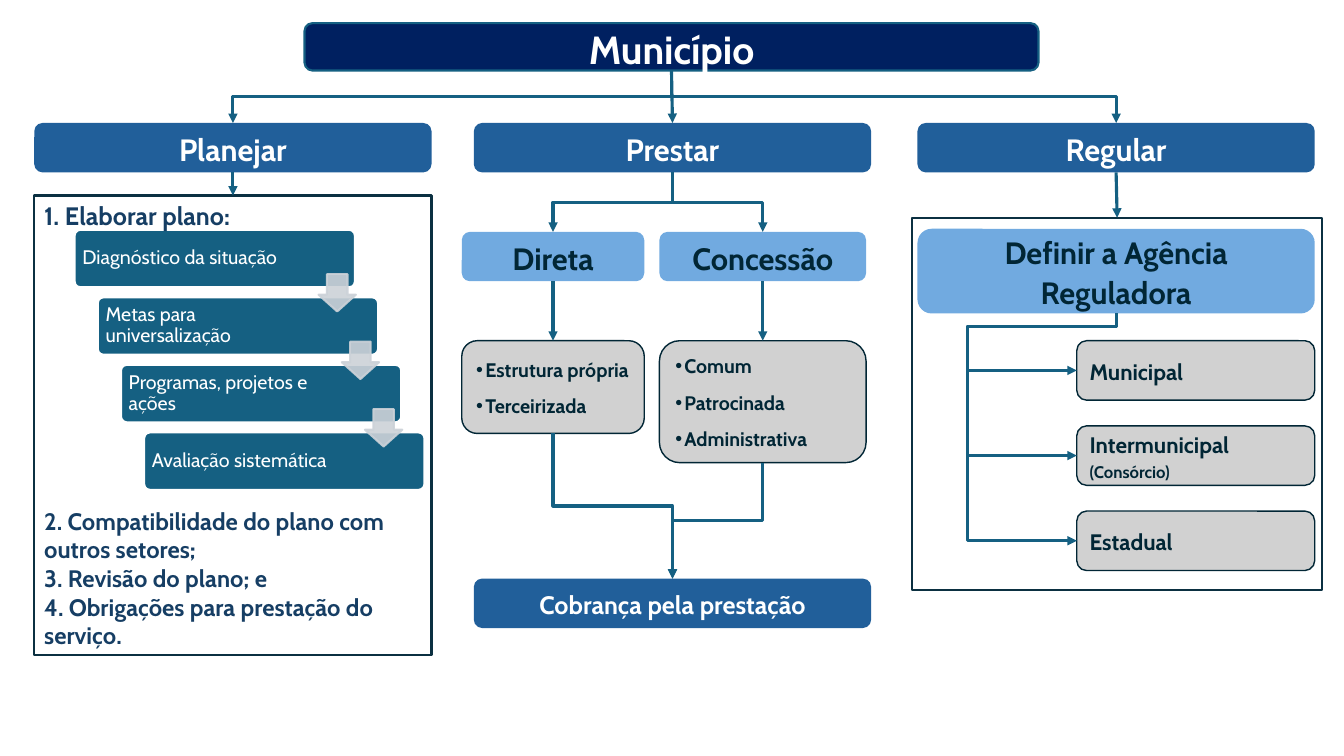
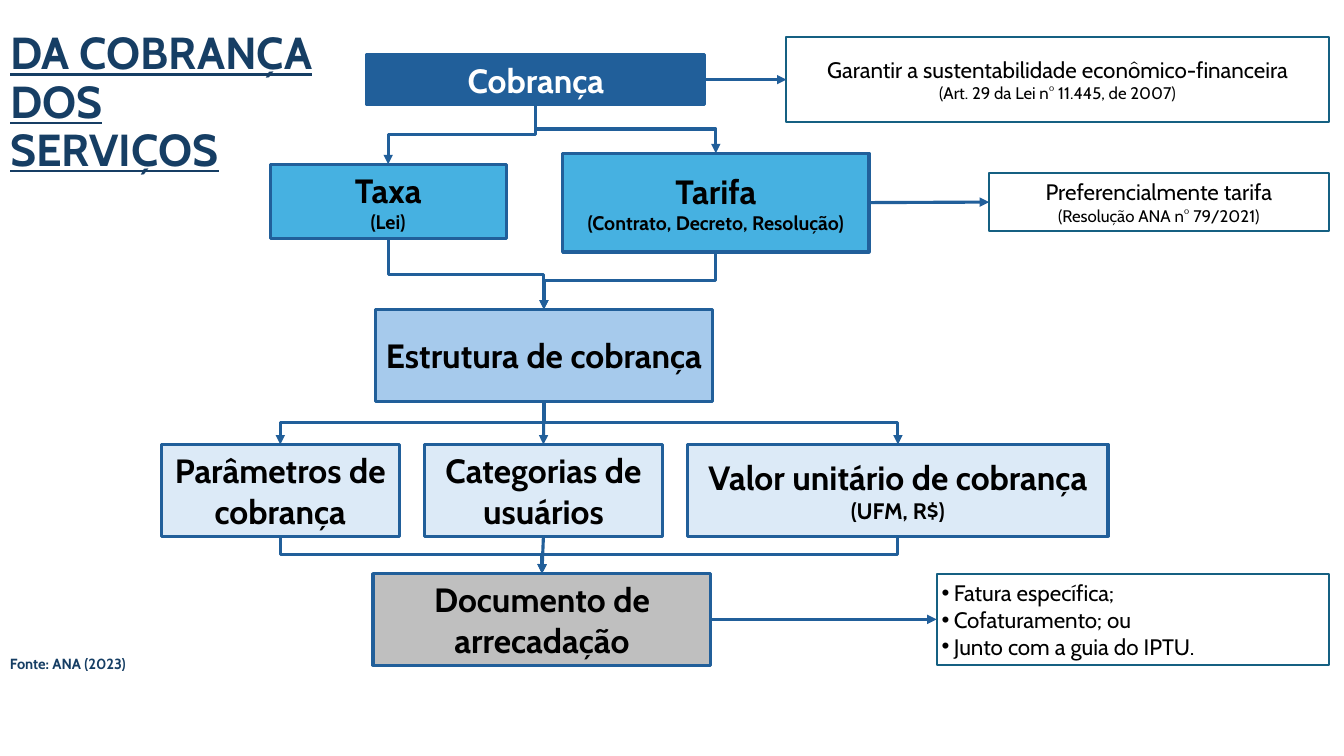
from lxml.etree import SubElement
from pptx import Presentation
from pptx.dml.color import RGBColor
from pptx.enum.dml import MSO_LINE
from pptx.enum.shapes import MSO_CONNECTOR as CONNECTOR, MSO_SHAPE as SHAPE
from pptx.enum.text import MSO_ANCHOR as ANCHOR, MSO_AUTO_SIZE, PP_ALIGN as ALIGN
from pptx.oxml.ns import qn
from pptx.util import Inches, Pt

FONT = "Cabin"
COLORS = {
    "navy": "002060", "blue": "215F9A", "sky": "71AAE0", "teal": "156082",
    "cyan": "46B1E1", "light": "A6CAEC", "pale": "DCEAF7", "gray": "D1D1D1",
    "silver": "BFBFBF", "arrow": "CCD2D8", "ink": "012635", "dash": "0B3041",
    "heading": "163E64", "white": "FFFFFF", "black": "000000",
}
COLORS = {name: RGBColor.from_string(value) for name, value in COLORS.items()}
TOP, LEFT, BOTTOM, RIGHT = range(4)


def add_box(slide, kind, at, lines=(), fill=None, line=None, width=1.5, color="white",
            bold=True, align=ALIGN.CENTER, anchor=ANCHOR.MIDDLE, margins=(0.1, 0.05, 0.1, 0.05),
            spacing=1.0, after=0, indent=None):
    """Add a box; lines holds (text, size) pairs, indent is (left margin, first line)."""
    place = [Inches(value) for value in at]
    if kind is None:
        shape = slide.shapes.add_textbox(*place)
    else:
        shape = slide.shapes.add_shape(kind, *place)
        shape.shadow.inherit = False
    if fill:
        shape.fill.solid()
        shape.fill.fore_color.rgb = COLORS[fill]
    else:
        shape.fill.background()
    if line:
        shape.line.color.rgb = COLORS[line]
        shape.line.width = Pt(width)
    else:
        shape.line.fill.background()
    frame = shape.text_frame
    frame.word_wrap = True
    frame.auto_size = MSO_AUTO_SIZE.NONE
    frame.vertical_anchor = anchor
    (frame.margin_left, frame.margin_top,
     frame.margin_right, frame.margin_bottom) = [Inches(value) for value in margins]
    for index, (text, size) in enumerate(lines):
        paragraph = frame.paragraphs[0] if index == 0 else frame.add_paragraph()
        paragraph.alignment = align
        paragraph.line_spacing = spacing
        paragraph.space_after = Pt(after)
        if indent:
            properties = paragraph._p.get_or_add_pPr()
            properties.set("marL", str(Inches(indent[0])))
            properties.set("indent", str(Inches(indent[1])))
            SubElement(properties, qn("a:buFont"), typeface="Arial")
            SubElement(properties, qn("a:buChar"), char="•")
        run = paragraph.add_run()
        run.text = text
        run.font.name, run.font.size, run.font.bold = FONT, Pt(size), bold
        run.font.color.rgb = COLORS[color]
    return shape


def connect(slide, start, end, color, sides=(BOTTOM, TOP), elbow=False, detour=None):
    """Join two boxes with an arrow; detour is the (down, left) way round of a side entry."""
    kind = CONNECTOR.ELBOW if elbow else CONNECTOR.STRAIGHT
    connector = slide.shapes.add_connector(kind, 0, 0, 0, 0)
    connector.begin_connect(start, sides[0])
    connector.end_connect(end, sides[1])
    connector.line.color.rgb = COLORS[color]
    connector.line.width = Pt(2.25)
    SubElement(connector.line._get_or_add_ln(), qn("a:tailEnd"), type="triangle")
    properties = connector._element.spPr
    SubElement(properties, qn("a:effectLst"))
    if elbow:
        # A bend that leaves downwards is a sideways bend turned by 90 degrees
        dx = connector.end_x - connector.begin_x
        dy = connector.end_y - connector.begin_y
        middle_x = connector.begin_x + dx // 2
        middle_y = connector.begin_y + dy // 2
        connector.width, connector.height = dy, abs(dx)
        connector.left, connector.top = middle_x - dy // 2, middle_y - abs(dx) // 2
        transform = properties.xfrm
        transform.flipH, transform.flipV = dx > 0, False
        transform.set("rot", "16200000" if dx > 0 else "5400000")
        if detour:
            geometry = properties.find(qn("a:prstGeom"))
            geometry.set("prst", "bentConnector4")
            guides = geometry.find(qn("a:avLst"))
            if guides is None:
                guides = SubElement(geometry, qn("a:avLst"))
            for number, (reach, extent) in enumerate(zip(detour, (dy, abs(dx))), 1):
                ratio = round(100000 * Inches(reach) / extent)
                SubElement(guides, qn("a:gd"), name=f"adj{number}", fmla=f"val {ratio}")
    return connector


presentation = Presentation()
presentation.slide_width, presentation.slide_height = Inches(13.33), Inches(7.5)

# Slide 1: duties of the municipality
slide = presentation.slides.add_slide(presentation.slide_layouts[6])
rounded = SHAPE.ROUNDED_RECTANGLE
header = dict(fill="blue", spacing=1.07)
option = dict(fill="sky", color="ink", spacing=1.07)
detail = dict(fill="gray", line="ink", width=1, color="ink", align=ALIGN.LEFT, spacing=1.07)
dashed = dict(line="dash", color="heading", align=ALIGN.LEFT, anchor=ANCHOR.TOP)

city = add_box(slide, rounded, (3.02, 0.23, 7.28, 0.47), [("Município", 28)],
               fill="navy", line="teal", spacing=1.07)
plan, provide, regulate = [
    add_box(slide, rounded, (left, 1.22, 3.94, 0.49), [(text, 22)], **header)
    for left, text in ((0.34, "Planejar"), (4.7, "Prestar"), (9.1, "Regular"))]
for duty in (regulate, plan):
    connect(slide, city, duty, "teal", elbow=True)
connect(slide, city, provide, "teal")

# Planning: descending steps and the arrows between them
steps = ["Diagnóstico da situação", "Metas para universalização",
         "Programas, projetos e ações", "Avaliação sistemática"]
for index, text in enumerate(steps):
    step = add_box(slide, rounded, (0.74 + 0.23 * index, 2.28 + 0.67 * index, 2.78, 0.57),
                   [(text, 14)], fill="teal", line="white", bold=False, align=ALIGN.LEFT,
                   spacing=0.9, margins=(0.06, 0.06, 0.66, 0.06))
    step.adjustments[0] = 0.1
for index in range(len(steps) - 1):
    arrow = add_box(slide, SHAPE.DOWN_ARROW,
                    (3.16 + 0.23 * index, 2.72 + 0.67 * index, 0.37, 0.37),
                    fill="arrow", line="arrow")
    arrow.adjustments[0], arrow.adjustments[1] = 0.55, 0.45
    for color_element in arrow._element.spPr.iter(qn("a:srgbClr")):
        SubElement(color_element, qn("a:alpha"), val="90000")

plan_panel = add_box(slide, SHAPE.RECTANGLE, (0.34, 1.94, 3.94, 4.56), [
    ("1. Elaborar plano:", 18),
    ("2. Compatibilidade do plano com outros setores;", 17),
    ("3. Revisão do plano; e", 17),
    ("4. Obrigações para prestação do serviço.", 17)], **dashed)
plan_panel.text_frame.paragraphs[1].space_before = Pt(197)
connect(slide, plan, plan_panel, "teal")

# Provision: direct or by concession
charge = add_box(slide, rounded, (4.7, 5.74, 3.94, 0.49),
                 [("Cobrança pela prestação", 18)], **header)
forms = [
    ("Direta", 4.58, 1.81, 0.92, ["Estrutura própria", "Terceirizada"]),
    ("Concessão", 6.54, 2.05, 1.21, ["Comum", "Patrocinada", "Administrativa"]),
]
for text, left, width, height, items in forms:
    form = add_box(slide, rounded, (left, 2.3, width, 0.49), [(text, 22)], **option)
    kinds = add_box(slide, rounded, (left, 3.38, width, height),
                    [(item, 14) for item in items], after=8, indent=(0.09, -0.09), **detail)
    connect(slide, provide, form, "teal", elbow=True)
    connect(slide, form, kinds, "teal")
    connect(slide, kinds, charge, "teal", elbow=True)

# Regulation: the agency and its levels
agency = add_box(slide, rounded, (9.1, 2.27, 3.94, 0.84),
                 [("Definir a Agência Reguladora", 22)], **option)
levels = [[("Municipal", 16)], [("Intermunicipal", 16), ("(Consórcio)", 12)], [("Estadual", 16)]]
for index, lines in enumerate(levels):
    level = add_box(slide, rounded, (10.68, 3.38 + 0.845 * index, 2.36, 0.59), lines,
                    after=2, **detail)
    connect(slide, agency, level, "teal", (BOTTOM, LEFT), elbow=True, detour=(0.13, 1.47))
agency_panel = add_box(slide, SHAPE.RECTANGLE, (9.05, 2.16, 4.06, 3.69), **dashed)
connect(slide, regulate, agency_panel, "teal")

# Slide 2: charging for the services
slide = presentation.slides.add_slide(presentation.slide_layouts[5])
title = slide.shapes.title
title.left, title.top, title.width, title.height = [Inches(v) for v in (0, 0.04, 12.12, 1.98)]
frame = title.text_frame
frame.auto_size = MSO_AUTO_SIZE.NONE
frame.vertical_anchor = ANCHOR.MIDDLE
paragraph = frame.paragraphs[0]
paragraph.alignment, paragraph.line_spacing = ALIGN.LEFT, 0.9
for index, text in enumerate(("DA COBRANÇA", "DOS", "SERVIÇOS")):
    if index:
        paragraph.add_line_break()
    run = paragraph.add_run()
    run.text = text
    run.font.name, run.font.size = FONT, Pt(32)
    run.font.bold = run.font.underline = True
    run.font.color.rgb = COLORS["heading"]

# Flow boxes
flow = {}
for name, at, fill, lines in [
    ("charge", (3.64, 0.54, 3.35, 0.5), "blue", [("Cobrança", 24)]),
    ("tax", (2.68, 1.63, 2.34, 0.74), "cyan", [("Taxa", 24), ("(Lei)", 14)]),
    ("tariff", (5.58, 1.52, 3.04, 0.98), "cyan",
     [("Tarifa", 24), ("(Contrato, Decreto, Resolução)", 14)]),
    ("structure", (3.72, 3.07, 3.35, 0.91), "light", [("Estrutura de cobrança", 24)]),
    ("parameters", (1.6, 4.41, 2.36, 0.91), "pale", [("Parâmetros de cobrança", 24)]),
    ("categories", (4.21, 4.41, 2.36, 0.91), "pale", [("Categorias de usuários", 24)]),
    ("value", (6.82, 4.41, 4.17, 0.91), "pale",
     [("Valor unitário de cobrança", 24), ("(UFM, R$)", 16)]),
    ("document", (3.7, 5.69, 3.35, 0.91), "silver", [("Documento de arrecadação", 24)]),
]:
    flow[name] = add_box(slide, SHAPE.RECTANGLE, at, lines, fill=fill, line="blue", width=2.25,
                         color="white" if fill == "blue" else "black", margins=(0.05,) * 4)

# Side notes, each reached from its flow box
for source, at, lines, layout in [
    ("charge", (7.8, 0.37, 5.38, 0.84),
     [("Garantir a sustentabilidade econômico-financeira", 16),
      ("(Art. 29 da Lei n° 11.445, de 2007)", 12)], {}),
    ("tariff", (9.81, 1.72, 3.37, 0.57),
     [("Preferencialmente tarifa", 16), ("(Resolução ANA n° 79/2021)", 12)], {}),
    ("document", (9.29, 5.69, 3.89, 0.91),
     [("Fatura específica;", 16), ("Cofaturamento; ou", 16), ("Junto com a guia do IPTU.", 16)],
     dict(align=ALIGN.LEFT, indent=(0.12, -0.16))),
]:
    note = add_box(slide, SHAPE.RECTANGLE, at, lines, fill="white", line="teal", color="black",
                   bold=False, margins=(0.05,) * 4, **layout)
    connect(slide, flow[source], note, "blue", (RIGHT, LEFT))

# Flow arrows
for start, end in [("charge", "tax"), ("charge", "tariff"),
                   ("tax", "structure"), ("tariff", "structure"),
                   ("structure", "parameters"), ("structure", "value"),
                   ("parameters", "document"), ("value", "document")]:
    connect(slide, flow[start], flow[end], "blue", elbow=True)
for start, end in [("structure", "categories"), ("categories", "document")]:
    connect(slide, flow[start], flow[end], "blue")

# Source line
add_box(slide, None, (0, 6.45, 5.74, 0.28), [("Fonte: ANA (2023)", 10.5)],
        color="heading", align=ALIGN.LEFT, anchor=ANCHOR.TOP)

presentation.save("out.pptx")
